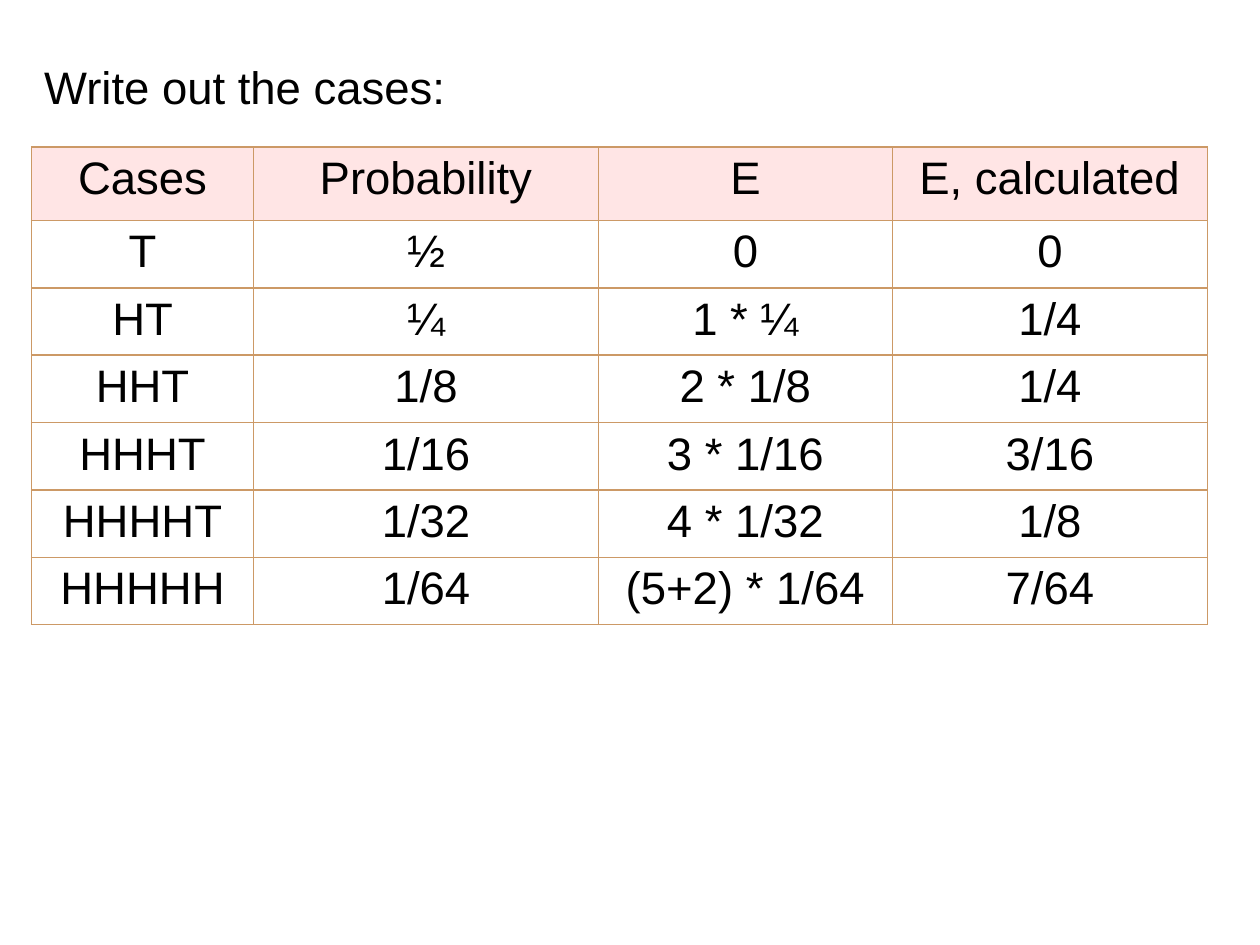
import pptx
import pptx.dml.color
import pptx.enum.text
import pptx.oxml.ns
import pptx.util
from lxml import etree

Pt = pptx.util.Pt
ALIGN = pptx.enum.text.PP_ALIGN
ANCHOR = pptx.enum.text.MSO_ANCHOR

CASES = [
    ("Cases", "Probability", "E", "E, calculated"),
    ("T", "½", "0", "0"),
    ("HT", "¼", "1 * ¼", "1/4"),
    ("HHT", "1/8", "2 * 1/8", "1/4"),
    ("HHHT", "1/16", "3 * 1/16", "3/16"),
    ("HHHHT", "1/32", "4 * 1/32", "1/8"),
    ("HHHHH", "1/64", "(5+2) * 1/64", "7/64"),
]
COL_WIDTHS = [127, 197, 168, 180]
HEADER_HEIGHT, ROW_HEIGHT = 42, 38.5


def rgb(value):
    return pptx.dml.color.RGBColor.from_string(value)


def set_text(tf, text, size=26, font="Arial", color="000000", align=ALIGN.LEFT,
             anchor=ANCHOR.TOP):
    tf.vertical_anchor = anchor
    p = tf.paragraphs[0]
    p.alignment = align
    r = p.add_run()
    r.text = text
    r.font.size = Pt(size)
    r.font.name = font
    r.font.bold = False
    r.font.color.rgb = rgb(color)


def add_child(parent, tag, **attrs):
    return etree.SubElement(parent, pptx.oxml.ns.qn(tag), **attrs)


def set_borders(cell, color, width):
    tc_pr = cell._tc.get_or_add_tcPr()
    for side in ("a:lnL", "a:lnR", "a:lnT", "a:lnB"):
        ln = add_child(tc_pr, side, w=str(Pt(width)))
        add_child(add_child(ln, "a:solidFill"), "a:srgbClr", val=color)


def set_fill(cell, color, opacity):
    cell.fill.solid()
    cell.fill.fore_color.rgb = rgb(color)
    clr = cell._tc.tcPr.find(".//" + pptx.oxml.ns.qn("a:srgbClr") + "[@val='%s']" % color)
    add_child(clr, "a:alpha", val=str(opacity * 1000))


def add_title(s, left, top, width, height):
    title = s.shapes.title
    title.left, title.top = Pt(left), Pt(top)
    title.width, title.height = Pt(width), Pt(height)
    tf = title.text_frame
    tf.word_wrap = False
    tf.auto_size = pptx.enum.text.MSO_AUTO_SIZE.SHAPE_TO_FIT_TEXT
    set_text(tf, "Write out the cases:", anchor=ANCHOR.MIDDLE)


def add_case_table(s, left, top, width, height):
    table = s.shapes.add_table(len(CASES), len(COL_WIDTHS), Pt(left), Pt(top),
                               Pt(width), Pt(height)).table
    table.horz_banding = False
    for col, col_width in zip(table.columns, COL_WIDTHS):
        col.width = Pt(col_width)
    for i, values in enumerate(CASES):
        table.rows[i].height = Pt(ROW_HEIGHT if i else HEADER_HEIGHT)
        for j, value in enumerate(values):
            cell = table.cell(i, j)
            set_text(cell.text_frame, value, align=ALIGN.CENTER)
            set_borders(cell, "CC9966", 1)
            if i == 0:
                set_fill(cell, "FFCCCC", 50)
            else:
                cell.fill.background()


def main():
    prs = pptx.Presentation()
    prs.slide_width, prs.slide_height = Pt(720), Pt(540)
    s = prs.slides.add_slide(prs.slide_layouts[5])  # title only

    # Heading
    add_title(s, 18, 30.5, 245, 38)
    # Table of cases
    add_case_table(s, 18, 84, sum(COL_WIDTHS),
                   HEADER_HEIGHT + ROW_HEIGHT * (len(CASES) - 1))

    prs.save("out.pptx")


if __name__ == "__main__":
    main()
